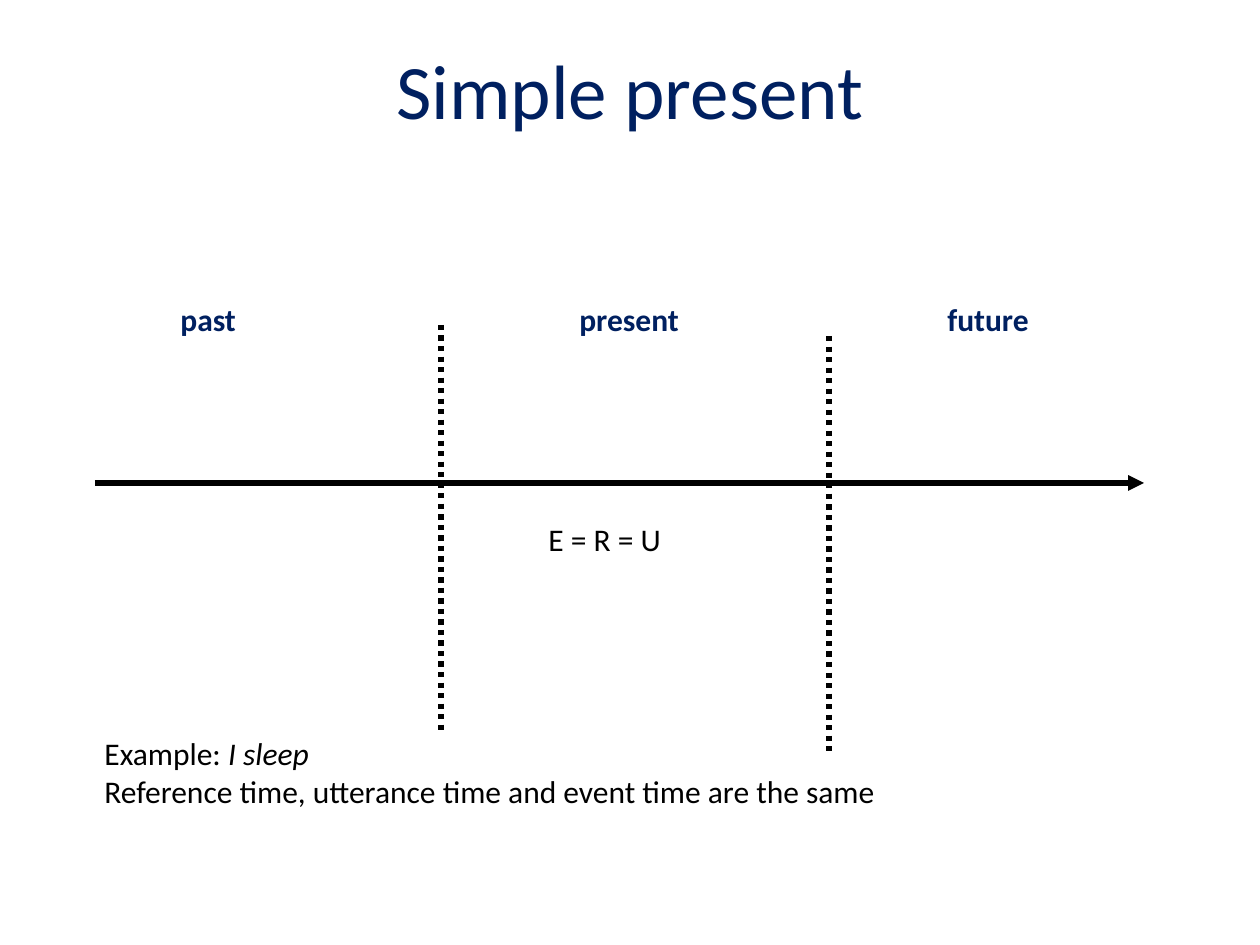
from lxml.etree import SubElement
from pptx import Presentation
from pptx.dml.color import RGBColor
from pptx.enum.dml import MSO_LINE
from pptx.enum.shapes import MSO_CONNECTOR
from pptx.enum.text import MSO_ANCHOR, MSO_AUTO_SIZE, PP_ALIGN
from pptx.oxml.ns import qn
from pptx.util import Emu, Pt

NAVY = RGBColor(0x00, 0x20, 0x60)
BLACK = RGBColor(0x00, 0x00, 0x00)
SCALE = 914400 / 126


def px(size):
    """Turn pixels into EMU."""
    return Emu(round(size * SCALE))


def write(para, text, size=18, color=BLACK, bold=False, italic=False):
    """Add a formatted run to a paragraph."""
    run = para.add_run()
    run.text = text
    font = run.font
    font.name = "Calibri"
    font.size = Pt(size)
    font.bold = bold
    font.italic = italic
    font.color.rgb = color


def add_title(slide, text):
    """Place and fill the title placeholder."""
    title = slide.shapes.title
    title.left, title.top, title.width, title.height = map(px, (63, 10, 1134, 158))
    frame = title.text_frame
    frame.vertical_anchor = MSO_ANCHOR.MIDDLE
    para = frame.paragraphs[0]
    para.alignment = PP_ALIGN.CENTER
    write(para, text, size=44, color=NAVY)


def add_box(slide, left, top, width, height):
    """Add a text box that fits its text and return its frame."""
    frame = slide.shapes.add_textbox(*map(px, (left, top, width, height))).text_frame
    frame.word_wrap = False
    frame.auto_size = MSO_AUTO_SIZE.SHAPE_TO_FIT_TEXT
    return frame


def add_line(slide, start, end, dash=None, arrow=False):
    """Draw a thick black line, dotted or with an arrowhead if asked."""
    line = slide.shapes.add_connector(MSO_CONNECTOR.STRAIGHT, *map(px, start + end))
    line.line.color.rgb = BLACK
    line.line.width = Pt(3)
    if dash:
        line.line.dash_style = dash
    if arrow:
        SubElement(line.line._get_or_add_ln(), qn("a:tailEnd"), type="triangle")
    SubElement(line._element.spPr, qn("a:effectLst"))


def main():
    """Build the tense timeline slide."""
    deck = Presentation()
    deck.slide_width, deck.slide_height = px(1260), px(945)
    slide = deck.slides.add_slide(deck.slide_layouts[5])
    add_title(slide, "Simple present")

    add_line(slide, (95, 483), (1144, 483), arrow=True)
    for left, top, end in ((441, 325, 735), (829, 336, 756)):
        add_line(slide, (left, top), (left, end), dash=MSO_LINE.ROUND_DOT)

    for text, left, width in (("past", 168, 82), ("present", 567, 126), ("future", 935, 107)):
        frame = add_box(slide, left, 294, width, 50)
        write(frame.paragraphs[0], text, color=NAVY, bold=True)

    frame = add_box(slide, 536, 514, 186, 50)
    write(frame.paragraphs[0], "E = R = U")

    frame = add_box(slide, 92, 728, 1014, 88)
    write(frame.paragraphs[0], "Example: ")
    write(frame.paragraphs[0], "I sleep", italic=True)
    write(frame.add_paragraph(), "Reference time, utterance time and event time are the same")

    deck.save("out.pptx")


if __name__ == "__main__":
    main()
